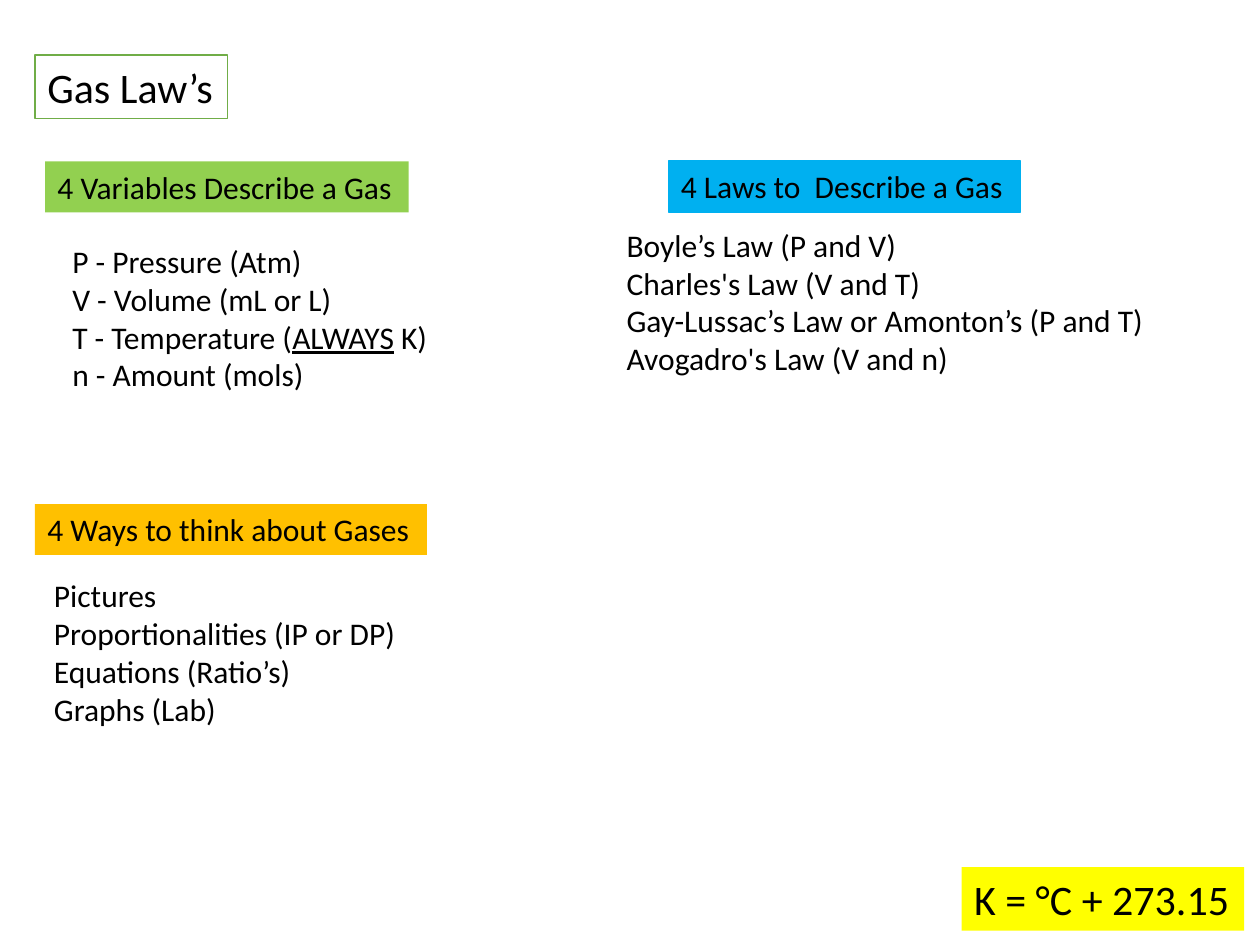
"""Build a one-slide overview of the gas laws."""
import pptx
import pptx.dml.color
import pptx.enum.text
import pptx.util

Pt = pptx.util.Pt
RGBColor = pptx.dml.color.RGBColor

BLACK = RGBColor(0x00, 0x00, 0x00)
WHITE = RGBColor(0xFF, 0xFF, 0xFF)
DARK_GREEN = RGBColor(0x70, 0xAD, 0x47)
GREEN = RGBColor(0x92, 0xD0, 0x50)
BLUE = RGBColor(0x00, 0xB0, 0xF0)
ORANGE = RGBColor(0xFF, 0xC0, 0x00)
YELLOW = RGBColor(0xFF, 0xFF, 0x00)

deck = pptx.Presentation()
deck.slide_width, deck.slide_height = Pt(720), Pt(540)
slide = deck.slides.add_slide(deck.slide_layouts[6])


def add_text(lines, left, top, width, height, size=18, wrap=False):
    box = slide.shapes.add_textbox(Pt(left), Pt(top), Pt(width), Pt(height))
    frame = box.text_frame
    frame.text = "\n".join(lines)
    frame.word_wrap = wrap
    frame.auto_size = pptx.enum.text.MSO_AUTO_SIZE.SHAPE_TO_FIT_TEXT
    for paragraph in frame.paragraphs:
        style_runs(paragraph, size)
    return box


def style_runs(paragraph, size):
    for run in paragraph.runs:
        run.font.name = "Calibri"
        run.font.size = Pt(size)
        run.font.color.rgb = BLACK


labels = [
    ("Gas Law’s", 20, 31.5, 110, 36.35, 24, WHITE, DARK_GREEN, 1),
    ("4 Variables Describe a Gas", 25.75, 92.25, 207.75, 29.1, 18, GREEN, None, 0),
    ("4 Laws to  Describe a Gas", 382, 92, 201, 29.1, 18, BLUE, BLUE, 0.75),
    ("4 Ways to think about Gases", 20, 288, 224, 29.1, 18, ORANGE, None, 0),
    ("K = °C + 273.15", 549.5, 495.5, 161.5, 36.35, 24, YELLOW, None, 0),
]
for wording, left, top, width, height, size, fill, outline, weight in labels:
    label = add_text([wording], left, top, width, height, size)
    label.fill.solid()
    label.fill.fore_color.rgb = fill
    if outline is not None:
        label.line.color.rgb = outline
        label.line.width = Pt(weight)

variables = add_text(
    ["P - Pressure (Atm)", "V - Volume (mL or L)", "T - Temperature (", "n - Amount (mols)"],
    34.25, 134.75, 232, 94.5, wrap=True)
temperature = variables.text_frame.paragraphs[2]
for wording, underlined in [("ALWAYS", True), (" K)", False)]:
    unit = temperature.add_run()
    unit.text = wording
    unit.font.underline = underlined
style_runs(temperature, 18)

add_text(
    ["Boyle’s Law (P and V)", "Charles's Law (V and T)",
     "Gay-Lussac’s Law or Amonton’s (P and T)", "Avogadro's Law (V and n)"],
    351, 125.5, 313, 94.5)
add_text(
    ["Pictures", "Proportionalities (IP or DP)", "Equations (Ratio’s)", "Graphs (Lab)"],
    23.75, 325.75, 211.5, 94.5)

deck.save("out.pptx")
